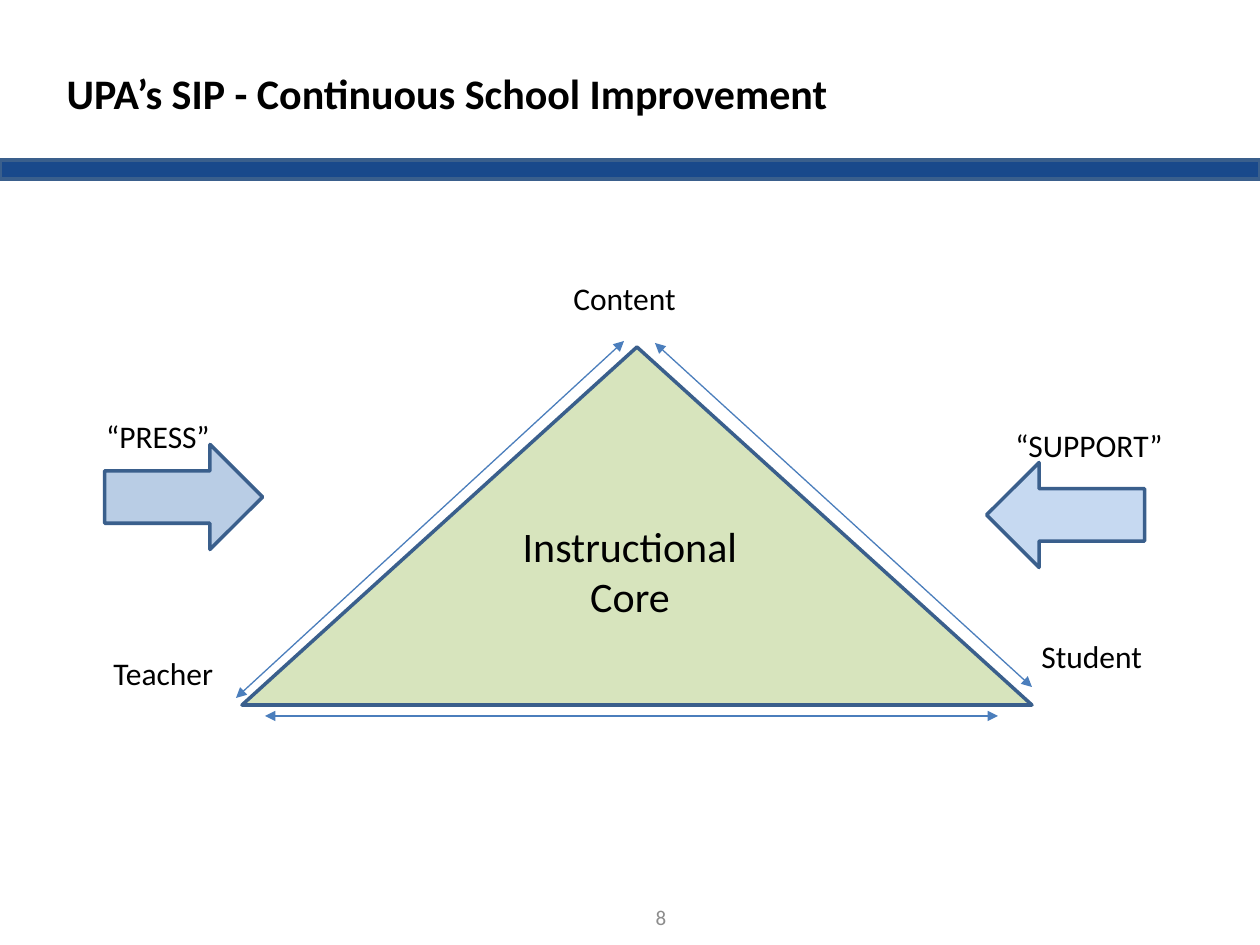
import pptx
import pptx.dml.color
import pptx.enum.shapes
import pptx.enum.text
import pptx.oxml
import pptx.oxml.ns
import pptx.util

RGBColor = pptx.dml.color.RGBColor
Align = pptx.enum.text.PP_ALIGN
Anchor = pptx.enum.text.MSO_ANCHOR
Shape = pptx.enum.shapes.MSO_SHAPE

BLACK = RGBColor(0x00, 0x00, 0x00)
GREY = RGBColor(0x8C, 0x8C, 0x8C)
NAVY = RGBColor(0x19, 0x49, 0x8B)
OUTLINE = RGBColor(0x3A, 0x5F, 0x8C)
EDGE = RGBColor(0x4B, 0x7E, 0xBC)
GREEN = RGBColor(0xD7, 0xE4, 0xBD)
PRESS_BLUE = RGBColor(0xB9, 0xCD, 0xE5)
SUPPORT_BLUE = RGBColor(0xC6, 0xD9, 0xF1)

FONT = "Calibri"
PX_PER_INCH = 126


def px(length):
    """Turn whole pixels into EMU."""
    return pptx.util.Emu(round(length * pptx.util.Inches(1) / PX_PER_INCH))


def write_text(frame, text, size=18, color=BLACK, bold=False, align=Align.LEFT, anchor=Anchor.TOP):
    """Fill a text frame, one paragraph for each line of text."""
    frame.word_wrap = True
    frame.auto_size = pptx.enum.text.MSO_AUTO_SIZE.NONE
    frame.vertical_anchor = anchor
    for index, line in enumerate(text.split("\n")):
        para = frame.add_paragraph() if index else frame.paragraphs[0]
        para.alignment = align
        span = para.add_run()
        span.text = line
        span.font.name = FONT
        span.font.size = pptx.util.Pt(size)
        span.font.bold = bold
        span.font.color.rgb = color


def add_label(page, box, text, **style):
    """Add a text box at the given left, top, width and height."""
    label = page.shapes.add_textbox(*map(px, box))
    write_text(label.text_frame, text, **style)


def add_block(page, kind, box, fill):
    """Add an outlined preset shape."""
    block = page.shapes.add_shape(kind, *map(px, box))
    block.shadow.inherit = False
    block.fill.solid()
    block.fill.fore_color.rgb = fill
    block.line.color.rgb = OUTLINE
    block.line.width = pptx.util.Pt(2)
    return block


def add_double_arrow(page, start, end):
    """Add a thin line with an arrowhead at both ends."""
    arrow = page.shapes.add_connector(
        pptx.enum.shapes.MSO_CONNECTOR.STRAIGHT, *map(px, start + end))
    arrow.line.color.rgb = EDGE
    arrow.line.width = pptx.util.Pt(0.75)
    outline = arrow.line._get_or_add_ln()
    for tag in ("a:headEnd", "a:tailEnd"):
        tip = pptx.oxml.xmlchemy.OxmlElement(tag)
        tip.set("type", "triangle")
        outline.append(tip)
    arrow._element.spPr.append(pptx.oxml.xmlchemy.OxmlElement("a:effectLst"))


def add_header(page, box):
    """Place the title above a full-width bar."""
    left, top, width, height = box
    bar_height = 19
    add_block(page, Shape.RECTANGLE,
              (left, top + height - bar_height, width, bar_height), NAVY)
    title = page.shapes.title
    title.left, title.top = px(left + 54), px(top + 31)
    title.width, title.height = px(width - 2 * 54), px(93)
    write_text(title.text_frame, "UPA’s SIP - Continuous School Improvement",
               size=24, bold=True, anchor=Anchor.BOTTOM)


def add_core(page, box):
    """Place the triangle with its named corners and two-way edges."""
    left, top, width, height = box
    add_block(page, Shape.ISOSCELES_TRIANGLE, box, GREEN)
    add_label(page, (left + 262, top + 167, 252, 115), "Instructional\nCore",
              size=24, align=Align.CENTER)
    edges = [
        ((413, -4), (width, height - 18)),
        ((23, height + 11), (width - 34, height + 11)),
        ((-6, height - 7), (382, -6)),
    ]
    for start, end in edges:
        add_double_arrow(page, (left + start[0], top + start[1]),
                         (left + end[0], top + end[1]))
    corners = [
        ("Content", (246, -74, 273, 50), Align.CENTER),
        ("Student", (787, 284, 210, 52), Align.LEFT),
        ("Teacher", (-141, 301, 284, 52), Align.LEFT),
    ]
    for text, (across, down, *size), align in corners:
        add_label(page, (left + across, top + down, *size), text, align=align)


def add_force(page, box, text, fill, rotation, label_shift):
    """Place a sideways arrow with its label above."""
    left, top, width, height = box
    inset = (width - height) // 2
    arrow = add_block(page, Shape.DOWN_ARROW,
                      (left + inset, top - inset, height, width), fill)
    arrow.rotation = rotation
    across, down = label_shift
    add_label(page, (left + across, top + down, 252, 50), text, align=Align.CENTER)


def add_page_number(page, box):
    """Place the page number at the foot."""
    add_label(page, box, "8", size=12, color=GREY,
              align=Align.CENTER, anchor=Anchor.MIDDLE)


def main():
    """Build the deck and save it."""
    deck = pptx.Presentation()
    deck.slide_width, deck.slide_height = px(1260), px(945)
    page = deck.slides.add_slide(deck.slide_layouts.get_by_name("Title Only"))
    add_header(page, (0, 0, 1260, 179))
    add_page_number(page, (514, 892, 294, 50))
    add_core(page, (242, 347, 790, 358))
    add_force(page, (105, 444, 158, 105), "“PRESS”", PRESS_BLUE, 270, (-73, -33))
    add_force(page, (987, 462, 158, 105), "“SUPPORT”", SUPPORT_BLUE, 90, (-24, -42))
    deck.save("out.pptx")


if __name__ == "__main__":
    main()
